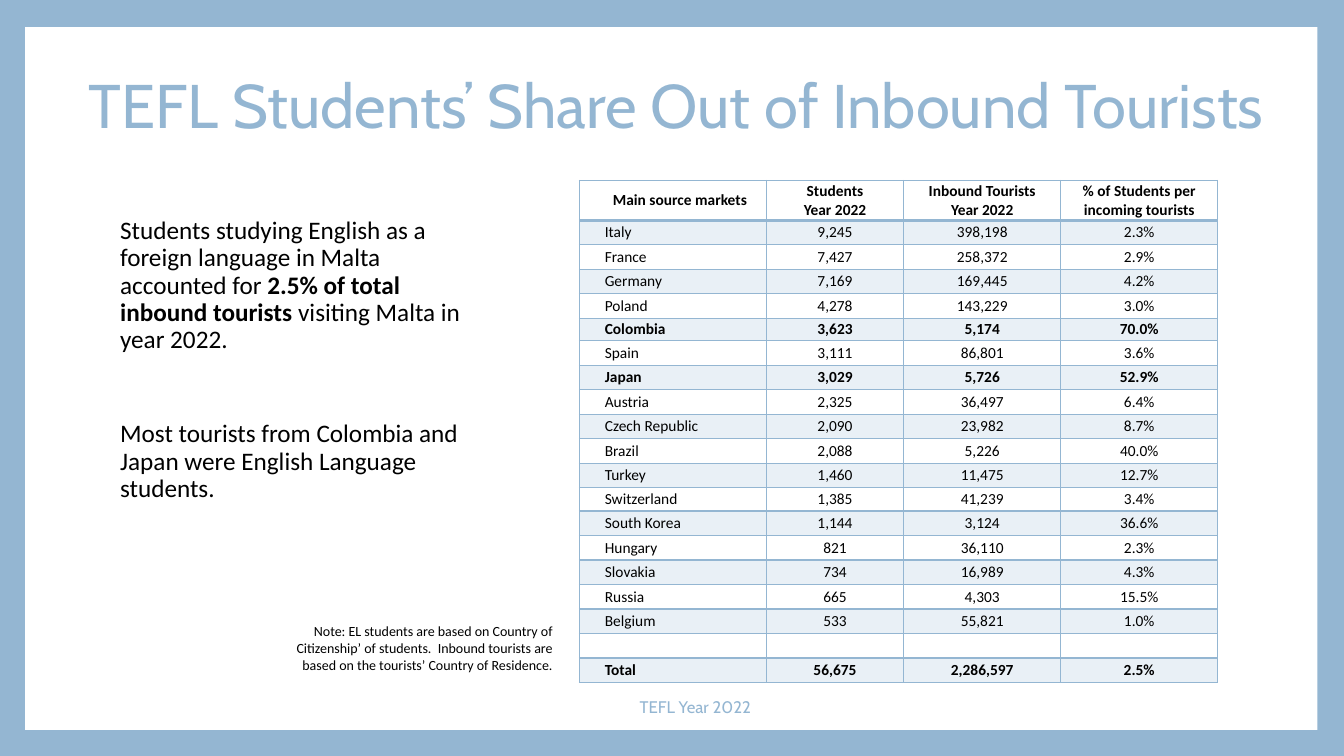
from lxml.etree import SubElement
from pptx import Presentation
from pptx.dml.color import RGBColor
from pptx.enum.shapes import MSO_SHAPE as Shape
from pptx.enum.text import MSO_ANCHOR as Anchor, MSO_AUTO_SIZE as AutoSize, PP_ALIGN as Align
from pptx.oxml.ns import qn
from pptx.util import Pt

BLUE, WHITE, BLACK = "94B6D2", "FFFFFF", "000000"
HEADINGS = ["Main source markets", "Students\nYear 2022",
            "Inbound Tourists\nYear 2022", "% of Students per incoming tourists"]
MARKETS = [
    ["Italy", "9,245", "398,198", "2.3%"],
    ["France", "7,427", "258,372", "2.9%"],
    ["Germany", "7,169", "169,445", "4.2%"],
    ["Poland", "4,278", "143,229", "3.0%"],
    ["Colombia", "3,623", "5,174", "70.0%"],
    ["Spain", "3,111", "86,801", "3.6%"],
    ["Japan", "3,029", "5,726", "52.9%"],
    ["Austria", "2,325", "36,497", "6.4%"],
    ["Czech Republic", "2,090", "23,982", "8.7%"],
    ["Brazil", "2,088", "5,226", "40.0%"],
    ["Turkey", "1,460", "11,475", "12.7%"],
    ["Switzerland", "1,385", "41,239", "3.4%"],
    ["South Korea", "1,144", "3,124", "36.6%"],
    ["Hungary", "821", "36,110", "2.3%"],
    ["Slovakia", "734", "16,989", "4.3%"],
    ["Russia", "665", "4,303", "15.5%"],
    ["Belgium", "533", "55,821", "1.0%"],
    ["", "", "", ""],
    ["Total", "56,675", "2,286,597", "2.5%"],
]
BOLD_ROWS = {"Colombia", "Japan", "Total"}
COLUMN_WIDTHS = [133.5, 98, 112.3, 112]
ROW_HEIGHT = 17.5
ODD_HEIGHTS = {0: 28.5, 5: 16.1, 12: 16.7}


def color(value):
    return RGBColor.from_string(value)


def place(box, left, top, width, height):
    box.left, box.top, box.width, box.height = Pt(left), Pt(top), Pt(width), Pt(height)


def add_span(para, text, size, font="Calibri", ink=BLACK, bold=False):
    span = para.add_run()
    span.text = text
    span.font.size = Pt(size)
    span.font.name = font
    span.font.bold = bold
    span.font.color.rgb = color(ink)


def add_panel(page):
    """White panel behind everything, leaving a blue frame."""
    panel = page.shapes.add_shape(Shape.RECTANGLE, Pt(18), Pt(19.4), Pt(923), Pt(502))
    panel.shadow.inherit = False
    panel.fill.solid()
    panel.fill.fore_color.rgb = color(WHITE)
    panel.line.fill.background()
    page.shapes._spTree.insert(2, panel._element)


def set_title(page, text):
    title = page.shapes.title
    place(title, 56.2, 40.3, 871, 75)
    frame = title.text_frame
    frame.auto_size = AutoSize.NONE
    frame.vertical_anchor = Anchor.MIDDLE
    para = frame.paragraphs[0]
    para.alignment = Align.LEFT
    para.line_spacing = 0.9
    add_span(para, text, 44, "Cabin", BLUE)


def set_body(body, paragraphs):
    """Each paragraph is a space before and a list of (text, bold) parts."""
    place(body, 70.6, 152, 271.4, 276)
    frame = body.text_frame
    frame.auto_size = AutoSize.NONE
    for index, (space, parts) in enumerate(paragraphs):
        para = frame.add_paragraph() if index else frame.paragraphs[0]
        para.line_spacing = 0.9
        para.space_before = Pt(space)
        props = para._p.get_or_add_pPr()
        props.set("marL", str(Pt(8)))
        props.set("indent", "0")
        SubElement(props, qn("a:buNone"))
        for text, bold in parts:
            add_span(para, text, 18, bold=bold)


def add_text(page, area, text, size, align, font="Calibri", ink=BLACK, anchor=Anchor.TOP):
    box = page.shapes.add_textbox(*map(Pt, area))
    frame = box.text_frame
    frame.word_wrap = True
    frame.vertical_anchor = anchor
    frame.paragraphs[0].alignment = align
    add_span(frame.paragraphs[0], text, size, font, ink)


def style_cell(cell, bottom, banded):
    props = cell._tc.get_or_add_tcPr()
    for side, width in (("L", 1), ("R", 1), ("T", 1), ("B", bottom)):
        line = SubElement(props, qn(f"a:ln{side}"), w=str(Pt(width)))
        SubElement(SubElement(line, qn("a:solidFill")), qn("a:srgbClr"), val=BLUE)
    if banded:
        cell.fill.solid()
        cell.fill.fore_color.rgb = color(BLUE)
        tint = props.find(qn("a:solidFill")).find(qn("a:srgbClr"))
        SubElement(tint, qn("a:alpha"), val="20000")
    else:
        cell.fill.background()


def fill_cell(cell, text, align, bold, inset):
    cell.margin_left = Pt(inset)
    cell.margin_right = cell.margin_top = cell.margin_bottom = 0
    cell.vertical_anchor = Anchor.MIDDLE
    frame = cell.text_frame
    for index, line in enumerate(text.split("\n")):
        para = frame.add_paragraph() if index else frame.paragraphs[0]
        para.alignment = align
        if line:
            add_span(para, line, 11, bold=bold)
        else:
            SubElement(para._p, qn("a:endParaRPr"), sz="1100")


def add_market_table(page):
    rows = [HEADINGS] + MARKETS
    heights = [ODD_HEIGHTS.get(index, ROW_HEIGHT) for index in range(len(rows))]
    table = page.shapes.add_table(
        len(rows), len(HEADINGS), Pt(414), Pt(128.9),
        Pt(sum(COLUMN_WIDTHS)), Pt(sum(heights))).table
    table.first_row = table.horz_banding = False
    for column, width in zip(table.columns, COLUMN_WIDTHS):
        column.width = Pt(width)
    for row, (height, values) in enumerate(zip(heights, rows)):
        table.rows[row].height = Pt(height)
        header = row == 0
        for col, text in enumerate(values):
            cell = table.cell(row, col)
            name = col == 0
            align = Align.LEFT if name and not header else Align.CENTER
            inset = (10 if header else 18) if name else 0
            fill_cell(cell, text, align, header or values[0] in BOLD_ROWS, inset)
            style_cell(cell, 2 if header else 1, row % 2 == 1)


def main():
    deck = Presentation()
    deck.slide_width, deck.slide_height = Pt(960), Pt(540)
    page = deck.slides.add_slide(deck.slide_layouts[1])

    # Frame and panel
    page.background.fill.solid()
    page.background.fill.fore_color.rgb = color(BLUE)
    add_panel(page)

    # Title and message
    set_title(page, "TEFL Students’ Share Out of Inbound Tourists")
    set_body(page.placeholders[1], [
        (14, [("Students studying English as a foreign language in Malta accounted for ", False),
              ("2.5% of total inbound tourists ", True),
              ("visiting Malta in year 2022.", False)]),
        (48, [("Most tourists from Colombia and Japan were English Language students.", False)]),
    ])

    # Figures by market
    add_market_table(page)

    # Note and footer
    add_text(page, (197.3, 441.4, 204.5, 44),
             "Note: EL students are based on Country of Citizenship’ of students.  "
             "Inbound tourists are based on the tourists’ Country of Residence.",
             10, Align.RIGHT)
    add_text(page, (311, 490.3, 371.5, 28.8), "TEFL Year 2022", 12, Align.CENTER,
             "Cabin", BLUE, Anchor.MIDDLE)

    deck.save("out.pptx")


if __name__ == "__main__":
    main()
